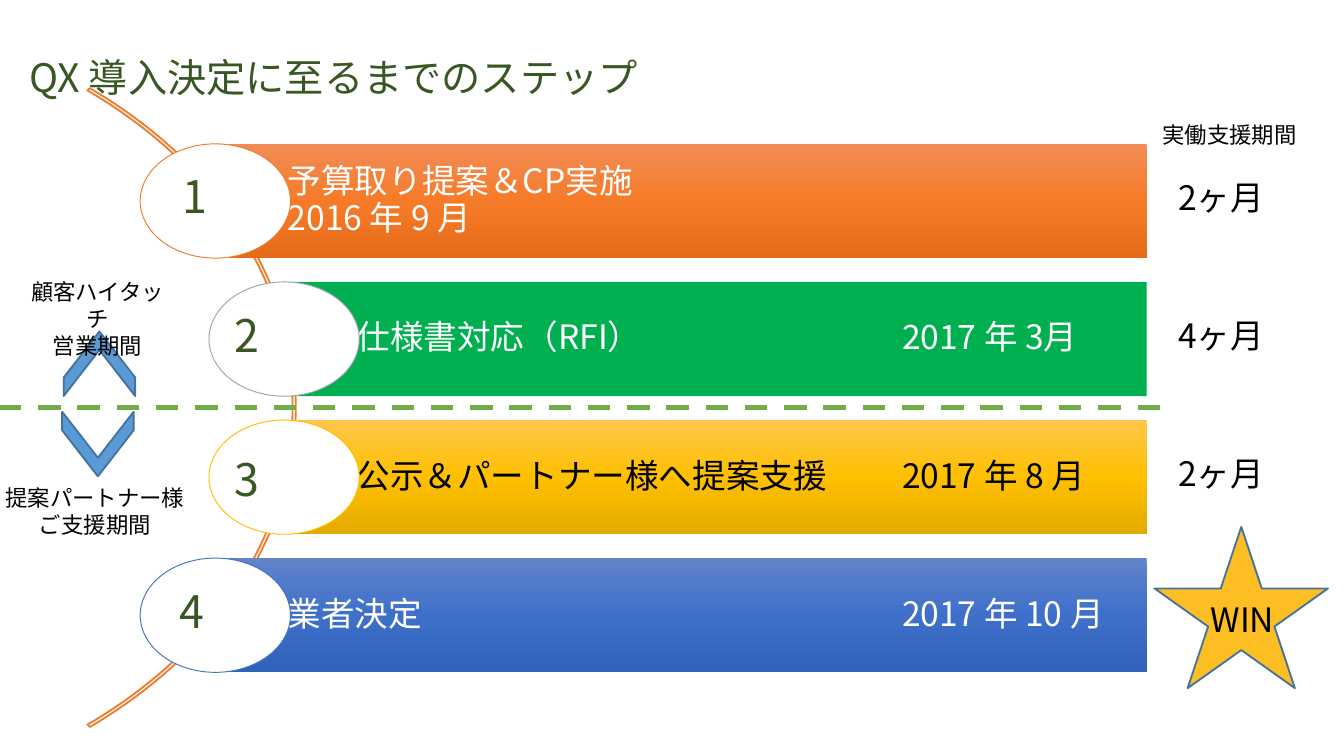
from copy import deepcopy

from pptx import Presentation
from pptx.dml.color import RGBColor
from pptx.enum.dml import MSO_LINE
from pptx.enum.shapes import MSO_CONNECTOR, MSO_SHAPE as Shape
from pptx.enum.text import MSO_ANCHOR as Anchor, MSO_AUTO_SIZE as AutoSize, PP_ALIGN as Align
from pptx.oxml.ns import qn
from pptx.oxml.xmlchemy import OxmlElement
from pptx.util import Cm, Pt

FONT = "Noto Sans CJK JP"
BAR_RIGHT, BAR_HEIGHT, PITCH = 21.67, 2.16, 2.61
OVAL_WIDTH, TEXT_INSET, DATE_LEFT = 2.84, 1.37, 17.05

# bar left, fills, oval line, text colour, text, number, number box (left, top), duration
STEPS = [
    (4.07, ["F18C57", "F67B28", "E56C19"], "ED7D31", "FFFFFF",
     "予算取り提案＆CP実施\n2016 年 9 月", "1", (2.44, 3.35), "2ヶ月"),
    (5.37, ["00B050"], "A5A5A5", "FFFFFF",
     "仕様書対応（RFI）\t2017 年 3月", "2", (3.43, 5.97), "4ヶ月"),
    (5.37, ["FFC64B", "FFC000", "E3AB00"], "FFC000", "000000",
     "公示＆パートナー様へ提案支援\t2017 年 8 月", "3", (3.43, 8.69), "2ヶ月"),
    (4.07, ["6183CB", "3E70CA", "3062BB"], "4472C4", "FFFFFF",
     "業者決定\t2017 年 10 月", "4", (2.39, 11.2), None),
]


def color(hex_text):
    return RGBColor.from_string(hex_text)


def lengths(box):
    return [Cm(value) for value in box]


def write(para, text, size, hex_text, align=Align.LEFT, spacing=None):
    para.alignment = align
    para.line_spacing = spacing
    for index, line in enumerate(text.split("\n")):
        if index:
            para.add_line_break()
        span = para.add_run()
        span.text = line
        span.font.size = Pt(size)
        span.font.name = FONT
        span.font.color.rgb = color(hex_text)
        east_asian = OxmlElement("a:ea")
        east_asian.set("typeface", FONT)
        span.font._element.find(qn("a:latin")).addnext(east_asian)


def add_label(page, box, lines, size, align=Align.LEFT):
    frame = page.shapes.add_textbox(*lengths(box)).text_frame
    frame.word_wrap = True
    frame.auto_size = AutoSize.SHAPE_TO_FIT_TEXT
    for index, line in enumerate(lines):
        para = frame.add_paragraph() if index else frame.paragraphs[0]
        write(para, line, size, "000000", align)


def paint(fill, fills, properties):
    if len(fills) == 1:
        fill.solid()
        fill.fore_color.rgb = color(fills[0])
        return
    fill.gradient()
    fill.gradient_angle = 270
    stops = properties.find(qn("a:gradFill")).find(qn("a:gsLst"))
    stops.append(deepcopy(stops[0]))
    for index, (stop, hex_text) in enumerate(zip(fill.gradient_stops, fills)):
        stop.position = index / 2
        stop.color.rgb = color(hex_text)


def add_figure(page, kind, box, fills=(), line=None, width=1.0):
    figure = page.shapes.add_shape(kind, *lengths(box))
    figure.shadow.inherit = False
    if fills:
        paint(figure.fill, fills, figure._element.spPr)
    else:
        figure.fill.background()
    if line:
        figure.line.color.rgb = color(line)
        figure.line.width = Pt(width)
    else:
        figure.line.fill.background()
    return figure


def add_title(page, box, text):
    title = page.shapes.title
    title.left, title.top, title.width, title.height = lengths(box)
    frame = title.text_frame
    frame.word_wrap = True
    frame.auto_size = AutoSize.NONE
    frame.vertical_anchor = Anchor.MIDDLE
    frame.margin_bottom = Cm(1.1)
    write(frame.paragraphs[0], text, 21, "385723", spacing=0.9)


def add_bar(page, box, fills, line, text_color, text):
    left, top, _, height = box
    frame = add_figure(page, Shape.RECTANGLE, box, fills).text_frame
    frame.word_wrap = True
    frame.vertical_anchor = Anchor.MIDDLE
    frame.margin_left = Cm(TEXT_INSET)
    frame.margin_right = frame.margin_top = frame.margin_bottom = Cm(0.13)
    para = frame.paragraphs[0]
    write(para, text, 18, text_color, spacing=0.9)
    # Tab stop that lines up the dates of all bars
    if "\t" in text:
        tabs = OxmlElement("a:tabLst")
        tab = OxmlElement("a:tab")
        tab.set("pos", str(Cm(DATE_LEFT - left - TEXT_INSET)))
        tab.set("algn", "l")
        tabs.append(tab)
        para._p.get_or_add_pPr().append(tabs)
    oval = (left - OVAL_WIDTH / 2, top, OVAL_WIDTH, height)
    add_figure(page, Shape.OVAL, oval, ["FFFFFF"], line, 0.5)


def add_number(page, box, number):
    frame = page.shapes.add_textbox(*lengths(box)).text_frame
    frame.word_wrap = True
    frame.vertical_anchor = Anchor.MIDDLE
    frame.margin_bottom = Cm(1.23)
    write(frame.paragraphs[0], number, 24, "385723", Align.CENTER, 0.9)


def add_steps(page, top):
    # Arc behind the steps
    arc = add_figure(page, Shape.BLOCK_ARC, (-14.27, 0.1, 19.86, 15.21), line="ED7D31")
    for index, value in enumerate((189, 27, 0.004)):
        arc.adjustments[index] = value
    # Bars with their ovals
    for index, (left, fills, line, text_color, text, *_) in enumerate(STEPS):
        box = (left, top + index * PITCH, BAR_RIGHT - left, BAR_HEIGHT)
        add_bar(page, box, fills, line, text_color, text)
    # Step numbers
    for *_, number, corner, _ in STEPS:
        add_number(page, (*corner, 2.49, 1.93), number)


def add_phases(page, top):
    # Dashed divider between the two phases
    divider = page.shapes.add_connector(
        MSO_CONNECTOR.STRAIGHT, *lengths((-0.02, top, 21.92, top)))
    divider.line.color.rgb = color("70AD47")
    divider.line.width = Pt(3)
    divider.line.dash_style = MSO_LINE.DASH
    divider._element.spPr.append(OxmlElement("a:effectLst"))
    # Chevrons pointing away from the divider
    for left, offset, turn in ((1.27, -1.5, 270), (1.24, 0.02, 90)):
        chevron = add_figure(page, Shape.CHEVRON, (left, top + offset, 1.22, 1.35),
                             ["5B9BD5"], "43739E")
        chevron.adjustments[0] = 0.713
        chevron.rotation = turn
    # Phase names
    add_label(page, (0.13, top - 2.57, 3.43, 1.27),
              ["顧客ハイタッチ", "営業期間"], 12, Align.CENTER)
    add_label(page, (-0.15, top + 1.32, 3.89, 1.27),
              ["提案パートナー様", "ご支援期間"], 12, Align.CENTER)


def add_durations(page, left, top):
    add_label(page, (left - 0.3, top, 3.12, 0.76), ["実働支援期間"], 12)
    for index, (*_, duration) in enumerate(STEPS):
        if duration:
            add_label(page, (left, top + 1.06 + index * PITCH, 3.12, 1.02), [duration], 18)
    # Goal star
    add_figure(page, Shape.STAR_5_POINT, (21.82, 9.96, 3.28, 3.05), ["FDBE24"], "43739E")
    add_label(page, (21.92, 11.2, 3.12, 1.02), ["WIN"], 18, Align.CENTER)


def main():
    deck = Presentation()
    deck.slide_width, deck.slide_height = Cm(25.4), Cm(14.29)
    page = deck.slides.add_slide(deck.slide_layouts[5])
    add_title(page, (0.3, 0.61, 21.89, 2.77), "QX 導入決定に至るまでのステップ")
    add_steps(page, 2.72)
    add_phases(page, 7.7)
    add_durations(page, 22.02, 2.16)
    deck.save("out.pptx")


if __name__ == "__main__":
    main()
